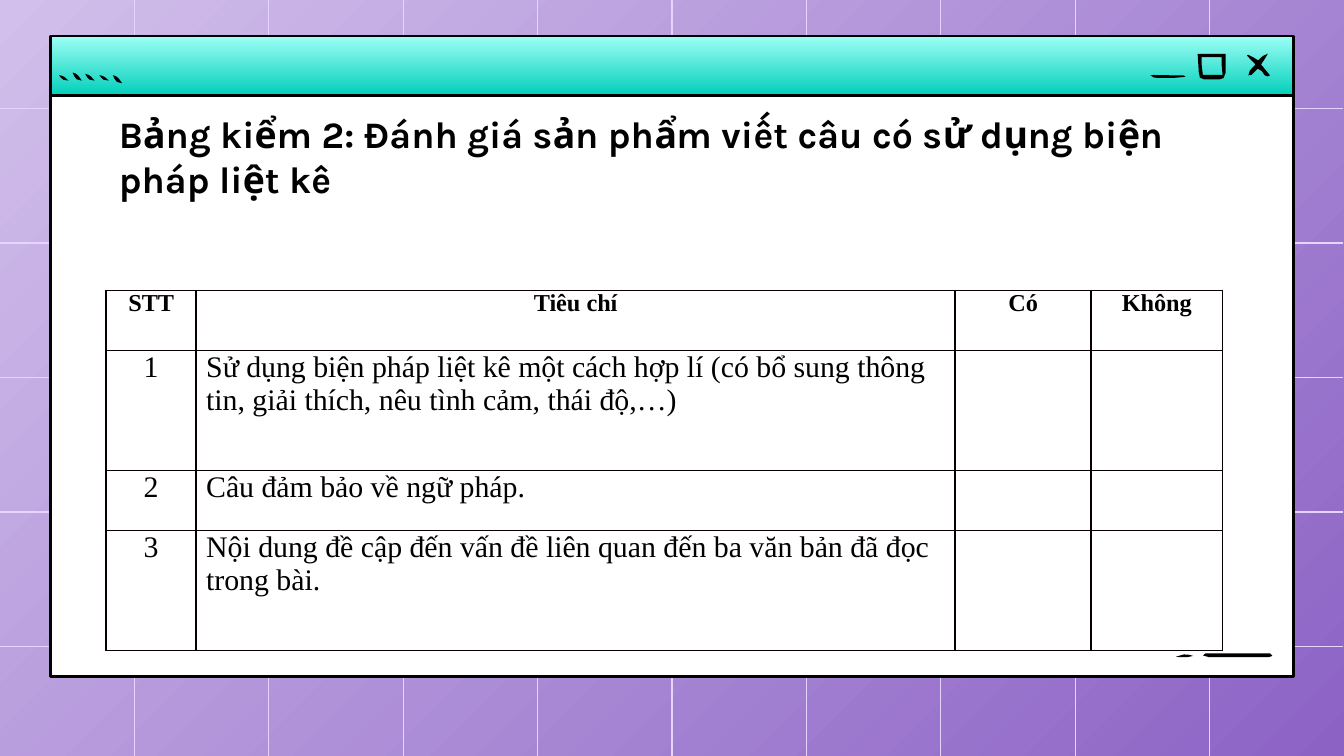
from lxml.etree import SubElement
from pptx import Presentation
from pptx.dml.color import RGBColor
from pptx.enum.shapes import MSO_CONNECTOR, MSO_SHAPE
from pptx.enum.text import MSO_ANCHOR, MSO_AUTO_SIZE, PP_ALIGN
from pptx.oxml.ns import qn
from pptx.util import Pt

BLACK = RGBColor(0, 0, 0)
WHITE = RGBColor(255, 255, 255)
LILAC = RGBColor(0xD2, 0xBF, 0xEB)
PURPLE = RGBColor(0x8C, 0x63, 0xC5)
GRID = RGBColor(0xE7, 0xD3, 0xFF)
MINT = RGBColor(0x9D, 0xFF, 0xF5)
TEAL = RGBColor(0x00, 0xCF, 0xBA)
BORDER = RGBColor(0x08, 0, 0)

WIDTH, HEIGHT = 720, 405
STEP = 72
HEAD = ["STT", "Tiêu chí", "Có", "Không"]
ITEMS = [
    "Sử dụng biện pháp liệt kê một cách hợp lí (có bổ sung thông tin, "
    "giải thích, nêu tình cảm, thái độ,…)",
    "Câu đảm bảo về ngữ pháp.",
    "Nội dung đề cập đến vấn đề liên quan đến ba văn bản đã đọc trong bài.",
]
SQUARE = [
    [(641.6, 28.8), (656.6, 28.8), (656.6, 39), (655.5, 41.8), (653.5, 42.5),
     (645, 42.5), (642.8, 41.6), (642.2, 38.5)],
    [(643.8, 30.6), (643.8, 35), (644.4, 40.2), (655, 40.2), (654.5, 35),
     (654.5, 30.6)],
]
CROSS = [
    (679.2, 28.8), (676.6, 30), (674, 32.4), (671.5, 30.8), (668.7, 29.4),
    (668, 29.8), (672.6, 34.6), (669.6, 37.8), (668.8, 40.4), (670.5, 40.2),
    (673.8, 36.8), (676, 38.2), (677.6, 40.4), (679.2, 41), (680.3, 40.4),
    (675.6, 34.6), (677.6, 31.6),
]
DASH = [(617.8, 40.2), (616.4, 40.5), (618.5, 41.7), (628.5, 41.8),
        (635.1, 41.2), (634.3, 40.5)]
BAR = [(645.8, 350), (644.5, 351.2), (647.5, 352), (679.8, 352),
       (681.6, 351.4), (680.4, 350)]
SPECK = [(634.3, 350.6), (630, 351.8), (632, 352.1), (636, 352.1),
         (639.2, 351.4), (637, 350.8)]
MARKS = [(31.7, 40.3, 2.9), (38.9, 38.9, 4.3), (45.7, 39.6, 3.6),
         (53.3, 40.3, 2.9), (60.5, 40.3, 4.3)]
LEAF = [(0, 0), (0.9, 0.45), (2.3, 0.85), (5, 1), (3.1, 0.4), (1.6, 0.12)]


class Painter:
    """Hold the deck style and draw each kind of element on the slide."""

    def __init__(self, deck):
        self.slide = deck.slides.add_slide(deck.slide_layouts[5])
        self.shapes = self.slide.shapes

    def blend(self, fill, first, last, angle):
        fill.gradient()
        fill.gradient_angle = 360 - angle
        for stop, color, place in zip(fill.gradient_stops, (first, last), (0, 1)):
            stop.color.rgb = color
            stop.position = place

    def line(self, x1, y1, x2, y2):
        line = self.shapes.add_connector(
            MSO_CONNECTOR.STRAIGHT, Pt(x1), Pt(y1), Pt(x2), Pt(y2))
        line.line.color.rgb = GRID
        line.line.width = Pt(0.75)
        SubElement(line._element.spPr, qn("a:effectLst"))

    def panel(self, left, top, width, height):
        box = self.shapes.add_shape(
            MSO_SHAPE.RECTANGLE, Pt(left), Pt(top), Pt(width), Pt(height))
        box.shadow.inherit = False
        box.line.color.rgb = BLACK
        box.line.width = Pt(1.5)
        box.fill.solid()
        box.fill.fore_color.rgb = WHITE
        return box

    def ink(self, *loops):
        paths = [[(Pt(x), Pt(y)) for x, y in loop] for loop in loops]
        pen = self.shapes.build_freeform(*paths[0][0])
        pen.add_line_segments(paths[0][1:])
        for path in paths[1:]:
            pen.move_to(*path[0])
            pen.add_line_segments(path[1:])
        blot = pen.convert_to_shape()
        blot.shadow.inherit = False
        blot.fill.solid()
        blot.fill.fore_color.rgb = BLACK
        blot.line.fill.background()

    def style(self, par, text, font, size, bold, align):
        par.text = text
        par.alignment = align
        par.font.name = font
        par.font.size = Pt(size)
        par.font.bold = bold
        par.font.color.rgb = BLACK

    def title(self, text, left, top, width, height):
        title = self.shapes.title
        title.left, title.top = Pt(left), Pt(top)
        title.width, title.height = Pt(width), Pt(height)
        frame = title.text_frame
        frame.word_wrap = True
        frame.auto_size = MSO_AUTO_SIZE.NONE
        frame.vertical_anchor = MSO_ANCHOR.TOP
        frame.margin_left = frame.margin_right = Pt(7.2)
        frame.margin_top = frame.margin_bottom = Pt(7.2)
        self.style(frame.paragraphs[0], text, "Karla", 20, True, PP_ALIGN.LEFT)
        self.shapes._spTree.append(title._element)

    def frame(self, cell):
        props = cell._tc.get_or_add_tcPr()
        for side in ("lnL", "lnR", "lnT", "lnB"):
            edge = SubElement(props, qn(f"a:{side}"), w=str(Pt(1)))
            fill = SubElement(edge, qn("a:solidFill"))
            SubElement(fill, qn("a:srgbClr"), val=str(BORDER))
        cell.fill.background()

    def table(self, rows, left, top, widths, heights):
        table = self.shapes.add_table(
            len(rows), len(widths), Pt(left), Pt(top),
            Pt(sum(widths)), Pt(sum(heights))).table
        table.first_row = table.horz_banding = False
        for col, width in zip(table.columns, widths):
            col.width = Pt(width)
        for r, (row, height) in enumerate(zip(rows, heights)):
            table.rows[r].height = Pt(height)
            for c, text in enumerate(row):
                cell = table.cell(r, c)
                cell.margin_left = cell.margin_right = Pt(5.4)
                cell.margin_top = cell.margin_bottom = 0
                self.frame(cell)
                align = PP_ALIGN.LEFT if r and c == 1 else PP_ALIGN.CENTER
                self.style(cell.text_frame.paragraphs[0], text,
                           "Times New Roman", 16 if r else 13, r == 0, align)


def main():
    deck = Presentation()
    deck.slide_width, deck.slide_height = Pt(WIDTH), Pt(HEIGHT)
    art = Painter(deck)
    art.blend(art.slide.background.fill, LILAC, PURPLE, 45)
    for x in range(STEP, WIDTH, STEP):
        art.line(x, 0, x, HEIGHT)
    for n in range(5):
        y = 58.3 + n * STEP
        art.line(0, y, WIDTH - 0.7, y)

    bar = art.panel(27, 19.3, 666, 32.2)
    art.blend(bar.fill, MINT, TEAL, 90)
    art.ink(*SQUARE)
    for shape in (CROSS, DASH):
        art.ink(shape)
    for x, y, tall in MARKS:
        art.ink([(x + dx, y + dy * tall) for dx, dy in LEAF])
    art.panel(27, 51.3, 666, 311)
    for shape in (BAR, SPECK):
        art.ink(shape)

    art.title("Bảng kiểm 2: Đánh giá sản phẩm viết câu có sử dụng biện pháp liệt kê",
              56.5, 52.6, 607, 52.6)
    rows = [HEAD] + [[str(n), item, "", ""] for n, item in enumerate(ITEMS, 1)]
    unit = 32.15
    art.table(rows, 56.9, 155.6, [48.2, 406.6, 72.8, 70.5],
              [unit, 2 * unit, unit, 2 * unit])
    deck.save("out.pptx")


if __name__ == "__main__":
    main()
